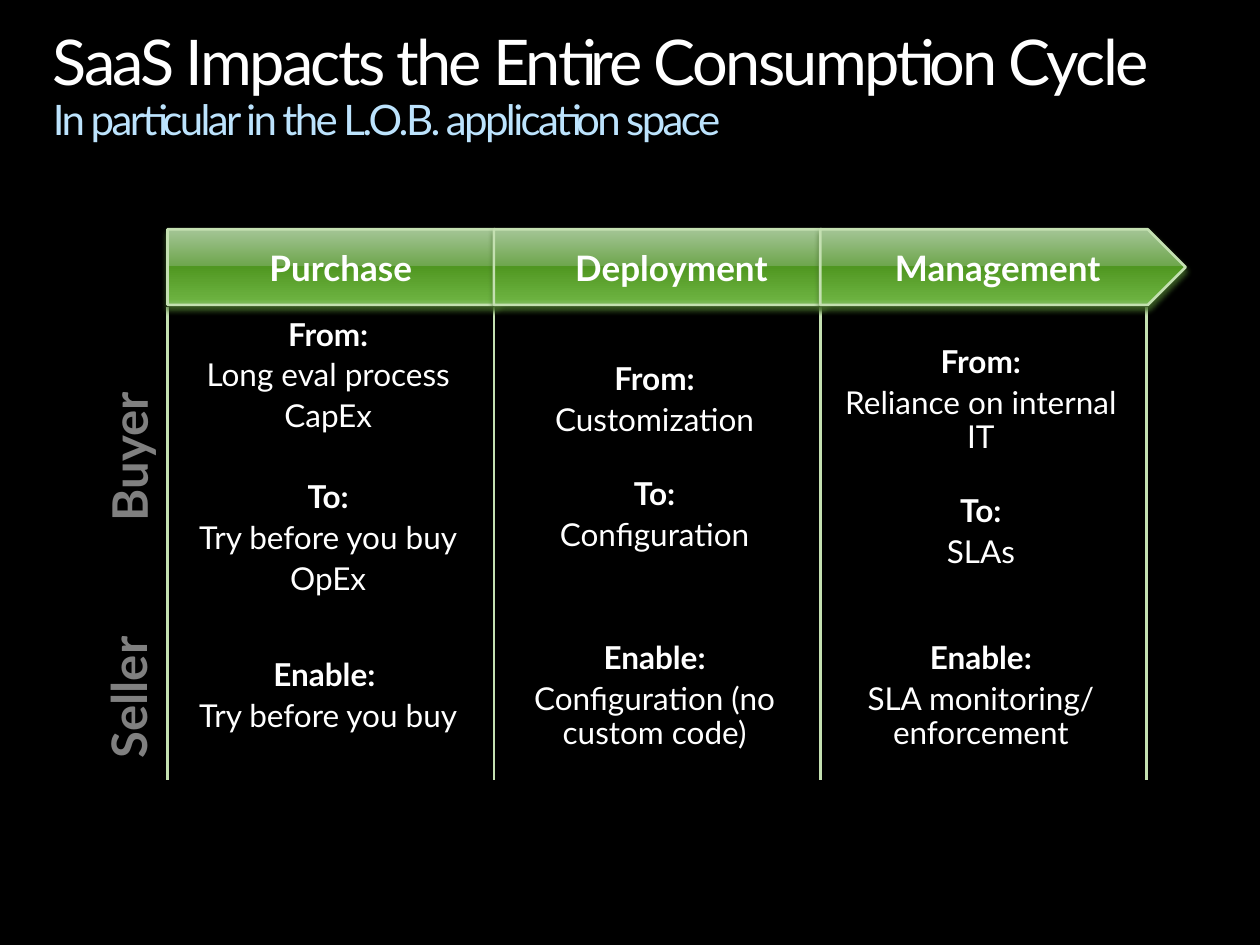
from lxml.etree import SubElement
from pptx import Presentation
from pptx.dml.color import RGBColor
from pptx.enum.shapes import MSO_CONNECTOR, MSO_SHAPE
from pptx.enum.text import MSO_ANCHOR, PP_ALIGN
from pptx.oxml import parse_xml
from pptx.oxml.ns import nsdecls, qn
from pptx.util import Inches, Pt

FONT, WHITE, PALE_GREEN = "Lato", "FFFFFF", "C4E0B1"
LEFT, COLUMN = 1.33, 2.59
HEADER_TOP, HEADER_HEIGHT = 1.82, 0.6
BODY_TOP, BODY_BOTTOM = 2.44, 6.19
BANDS = [(2.52, 2.23), (4.98, 1.1)]  # top and height of buyer and seller rows
GREENS = [(0, "A4C596"), (49, "6EA64D"), (49, "509721"), (92, "6BB13F"), (100, "81BC62")]


def style(span, size, color=WHITE, bold=False):
    span.font.name, span.font.size, span.font.bold = FONT, Pt(size), bold
    span.font.color.rgb = RGBColor.from_string(color)


def add_box(page, left, top, width, height, inset=True):
    box = page.shapes.add_textbox(Inches(left), Inches(top), Inches(width), Inches(height))
    frame = box.text_frame
    frame.word_wrap = True
    if not inset:
        frame.margin_left = frame.margin_right = frame.margin_top = frame.margin_bottom = 0
    return box


deck = Presentation()
deck.slide_width, deck.slide_height = Inches(10), Inches(7.5)
page = deck.slides.add_slide(deck.slide_layouts[6])
page.background.fill.solid()
page.background.fill.fore_color.rgb = RGBColor.from_string("000000")

# Title and subtitle
para = add_box(page, 0.42, 0.25, 9.17, 0.91, inset=False).text_frame.paragraphs[0]
para.text = "SaaS Impacts the Entire Consumption Cycle\vIn particular in the L.O.B. application space"
para.line_spacing = 0.9
for span, size, color in zip(para.runs, (36, 24), (WHITE, "BCE3FD")):
    style(span, size, color)
    span.font._element.set("spc", "-150")

# Column rules
for edge in range(4):
    x = Inches(LEFT + edge * COLUMN)
    rule = page.shapes.add_connector(MSO_CONNECTOR.STRAIGHT, x, Inches(BODY_TOP), x, Inches(BODY_BOTTOM))
    rule.line.color.rgb = RGBColor.from_string(PALE_GREEN)
    rule.line.width = Pt(1.5)
    SubElement(rule._element.spPr, qn("a:effectLst"))

# Stages: header, buyer text, seller text
stages = [
    ("Purchase",
     ["From:", "Long eval process", "CapEx", "To:", "Try before you buy", "OpEx"],
     ["Enable: ", "Try before you buy"]),
    (" Deployment",
     ["From:", "Customization", "To:", "Configuration"],
     ["Enable:", "Configuration (no custom code)"]),
    (" Management",
     ["From:", "Reliance on internal IT", "To:", "SLAs"],
     ["Enable:", "SLA monitoring/ enforcement"]),
]
stops = "".join(f'<a:gs pos="{share * 1000}"><a:srgbClr val="{color}"/></a:gs>' for share, color in GREENS)
for column, (name, *texts) in enumerate(stages):
    left = LEFT + column * COLUMN

    # Arrow header with glossy gradient and soft shadow
    arrow = page.shapes.add_shape(MSO_SHAPE.PENTAGON, Inches(left), Inches(HEADER_TOP),
                                  Inches(2.9), Inches(HEADER_HEIGHT))
    arrow.line.color.rgb = RGBColor.from_string(PALE_GREEN)
    arrow.line.width = Pt(1.5)
    arrow.shadow.inherit = False
    properties = arrow._element.spPr
    properties.find(qn("a:prstGeom")).addnext(parse_xml(
        f'<a:gradFill {nsdecls("a")} rotWithShape="1"><a:gsLst>{stops}</a:gsLst>'
        '<a:lin ang="5400000" scaled="0"/></a:gradFill>'))
    properties.find(qn("a:effectLst")).append(parse_xml(
        f'<a:outerShdw {nsdecls("a")} blurRad="39370" dist="25400" dir="5400000" rotWithShape="0">'
        '<a:srgbClr val="43692A"><a:alpha val="83000"/></a:srgbClr></a:outerShdw>'))
    arrow.text_frame.text = name
    arrow.text_frame.word_wrap = False
    arrow.text_frame.vertical_anchor = MSO_ANCHOR.MIDDLE
    para = arrow.text_frame.paragraphs[0]
    para.alignment = PP_ALIGN.CENTER
    style(para.runs[0], 20, bold=True)

    # Buyer and seller text
    for (top, height), lines in zip(BANDS, texts):
        frame = add_box(page, left + 0.05, top, 2.45, height).text_frame
        frame.text = "\n".join(lines)
        frame.vertical_anchor = MSO_ANCHOR.MIDDLE
        for index, para in enumerate(frame.paragraphs):
            para.alignment = PP_ALIGN.CENTER
            para.line_spacing = 0.9
            if index:
                para.space_before = Pt(3.8)
            if para.text == "To:":
                para.space_before = Pt(27 if column == 0 else 23)
            style(para.runs[0], 18, bold=para.text.strip().endswith(":"))

# Rotated row labels
for label, left, top, width in (("Buyer", 0.27, 3.39, 1.5), ("Seller", 0.38, 5.3, 1.27)):
    box = add_box(page, left, top, width, 0.47, inset=False)
    box.rotation = 270
    box.text_frame.text = label
    para = box.text_frame.paragraphs[0]
    para.alignment = PP_ALIGN.CENTER
    style(para.runs[0], 28, bold=True)
    tint = para.runs[0].font._element.find(".//" + qn("a:srgbClr"))
    SubElement(tint, qn("a:alpha")).set("val", "50000")

deck.save("out.pptx")
